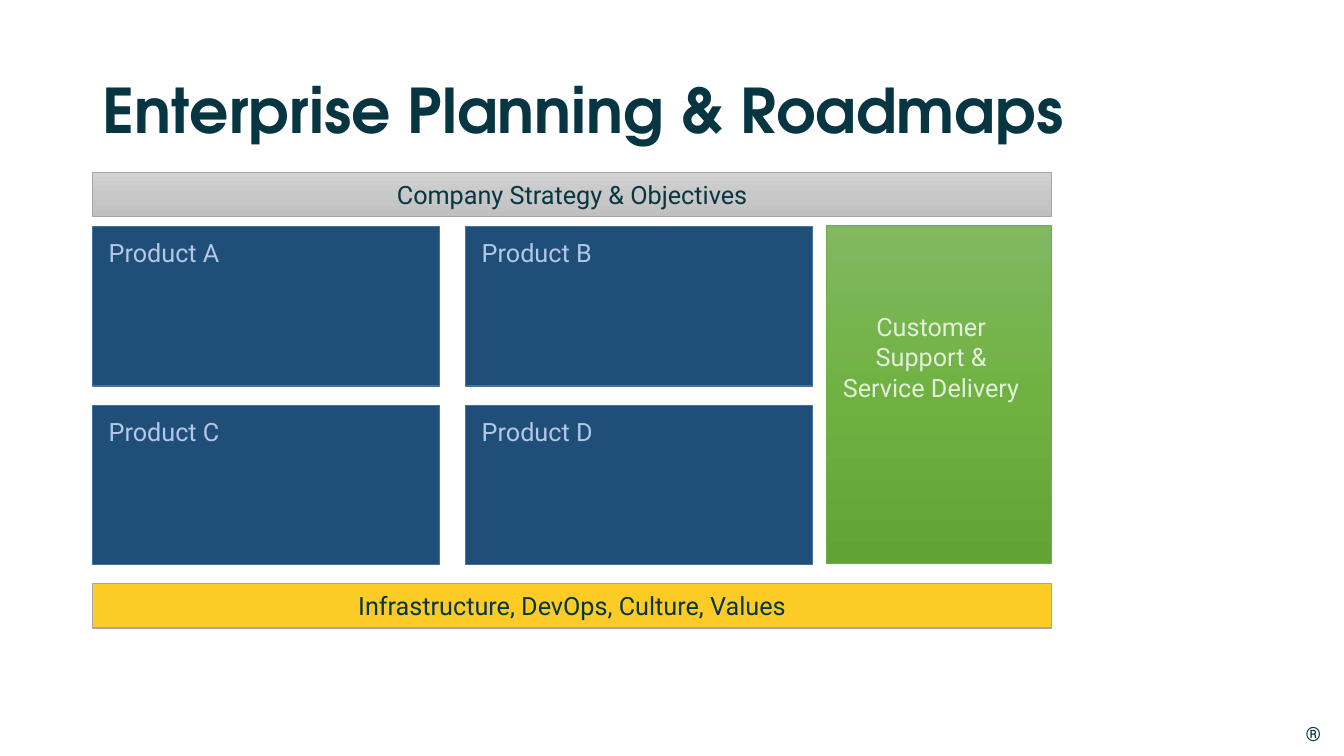
from copy import deepcopy
from itertools import product

from pptx import Presentation
from pptx.dml.color import RGBColor
from pptx.enum.shapes import MSO_SHAPE
from pptx.enum.text import MSO_ANCHOR, MSO_AUTO_SIZE, PP_ALIGN
from pptx.oxml.ns import qn
from pptx.util import Inches, Pt

INK = RGBColor(0x07, 0x36, 0x42)
NAVY = RGBColor(0x1F, 0x4E, 0x79)
NAVY_EDGE = RGBColor(0x43, 0x73, 0x9E)
PALE_BLUE = RGBColor(0xB4, 0xC7, 0xE7)
GREEN_EDGE = RGBColor(0x70, 0xAD, 0x47)
PALE_GREEN = RGBColor(0xE2, 0xF0, 0xD9)
GRAY = RGBColor(0xA5, 0xA5, 0xA5)
YELLOW = RGBColor(0xFD, 0xCB, 0x26)
GREENS = [RGBColor(0x81, 0xB8, 0x61), RGBColor(0x6F, 0xB2, 0x42), RGBColor(0x62, 0xA3, 0x36)]
GRAYS = [RGBColor(0xD2, 0xD2, 0xD2), RGBColor(0xC8, 0xC8, 0xC8), RGBColor(0xC0, 0xC0, 0xC0)]

LEFT, WIDTH = 0.92, 9.51
BAR_HEIGHT = 0.44
TILE_WIDTH, TILE_HEIGHT = 3.44, 1.58
COLUMN_STEP, ROW_STEP = 3.7, 1.77


def write(frame, text, size=18, font="Roboto", color=INK, bold=False,
          align=PP_ALIGN.LEFT, anchor=MSO_ANCHOR.TOP, spacing=None):
    frame.word_wrap = True
    frame.vertical_anchor = anchor
    paragraph = frame.paragraphs[0]
    paragraph.alignment = align
    paragraph.line_spacing = spacing
    run = paragraph.add_run()
    run.text = text
    run.font.size = Pt(size)
    run.font.name = font
    run.font.bold = bold
    run.font.color.rgb = color


def add_label(slide, box, text, **style):
    label = slide.shapes.add_textbox(*map(Inches, box))
    write(label.text_frame, text, **style)
    label.text_frame.auto_size = MSO_AUTO_SIZE.SHAPE_TO_FIT_TEXT
    return label


def add_block(slide, box, colors, edge, edge_width=1):
    block = slide.shapes.add_shape(MSO_SHAPE.RECTANGLE, *map(Inches, box))
    block.shadow.inherit = False
    block.line.color.rgb = edge
    block.line.width = Pt(edge_width)
    if len(colors) == 1:
        block.fill.solid()
        block.fill.fore_color.rgb = colors[0]
        return block
    block.fill.gradient()
    block.fill.gradient_angle = 270
    stop_list = block._element.spPr.find(qn("a:gradFill")).find(qn("a:gsLst"))
    stop_list.append(deepcopy(stop_list[0]))
    for index, (stop, color) in enumerate(zip(block.fill.gradient_stops, colors)):
        stop.position = index / (len(colors) - 1)
        stop.color.rgb = color
    return block


def add_title(slide, box, text):
    title = slide.shapes.title
    title.left, title.top, title.width, title.height = map(Inches, box)
    write(title.text_frame, text, size=44, font="TeX Gyre Adventor", bold=True,
          anchor=MSO_ANCHOR.MIDDLE, spacing=0.9)


def add_bar(slide, box, text, colors, edge_width):
    bar = add_block(slide, box, colors, GRAY, edge_width)
    write(bar.text_frame, text, align=PP_ALIGN.CENTER, anchor=MSO_ANCHOR.MIDDLE)


def add_products(slide, left, top, names):
    for name, (row, column) in zip(names, product(range(2), repeat=2)):
        x, y = left + column * COLUMN_STEP, top + row * ROW_STEP
        add_block(slide, (x, y, TILE_WIDTH, TILE_HEIGHT), [NAVY], NAVY_EDGE)
        add_label(slide, (x + 0.06, y + 0.06, 1.44, 0.4), name, color=PALE_BLUE)


def add_support(slide, box, text):
    left, top, width, height = box
    add_block(slide, box, GREENS, GREEN_EDGE, 0.5)
    add_label(slide, (left + 0.01, top + 0.8, width - 0.18, 1.31), text,
              color=PALE_GREEN, align=PP_ALIGN.CENTER)


def add_trademark(slide, box):
    frame = add_label(slide, box, "®", size=14).text_frame
    frame.word_wrap = False
    frame.margin_left = frame.margin_right = frame.margin_top = frame.margin_bottom = 0


def main():
    deck = Presentation()
    deck.slide_width, deck.slide_height = Inches(13.33), Inches(7.5)
    slide = deck.slides.add_slide(deck.slide_layouts[5])
    add_trademark(slide, (12.95, 7.16, 0.18, 0.24))
    add_title(slide, (LEFT, 0.4, 11.5, 1.45), "Enterprise Planning & Roadmaps")
    add_support(slide, (8.2, 2.24, 2.23, 3.35), "Customer Support & Service Delivery")
    add_bar(slide, (LEFT, 1.71, WIDTH, BAR_HEIGHT), "Company Strategy & Objectives", GRAYS, 0.5)
    add_products(slide, LEFT, 2.25, ["Product A", "Product B", "Product C", "Product D"])
    add_bar(slide, (LEFT, 5.79, WIDTH, BAR_HEIGHT), "Infrastructure, DevOps, Culture, Values",
            [YELLOW], 1)
    deck.save("out.pptx")


if __name__ == "__main__":
    main()
